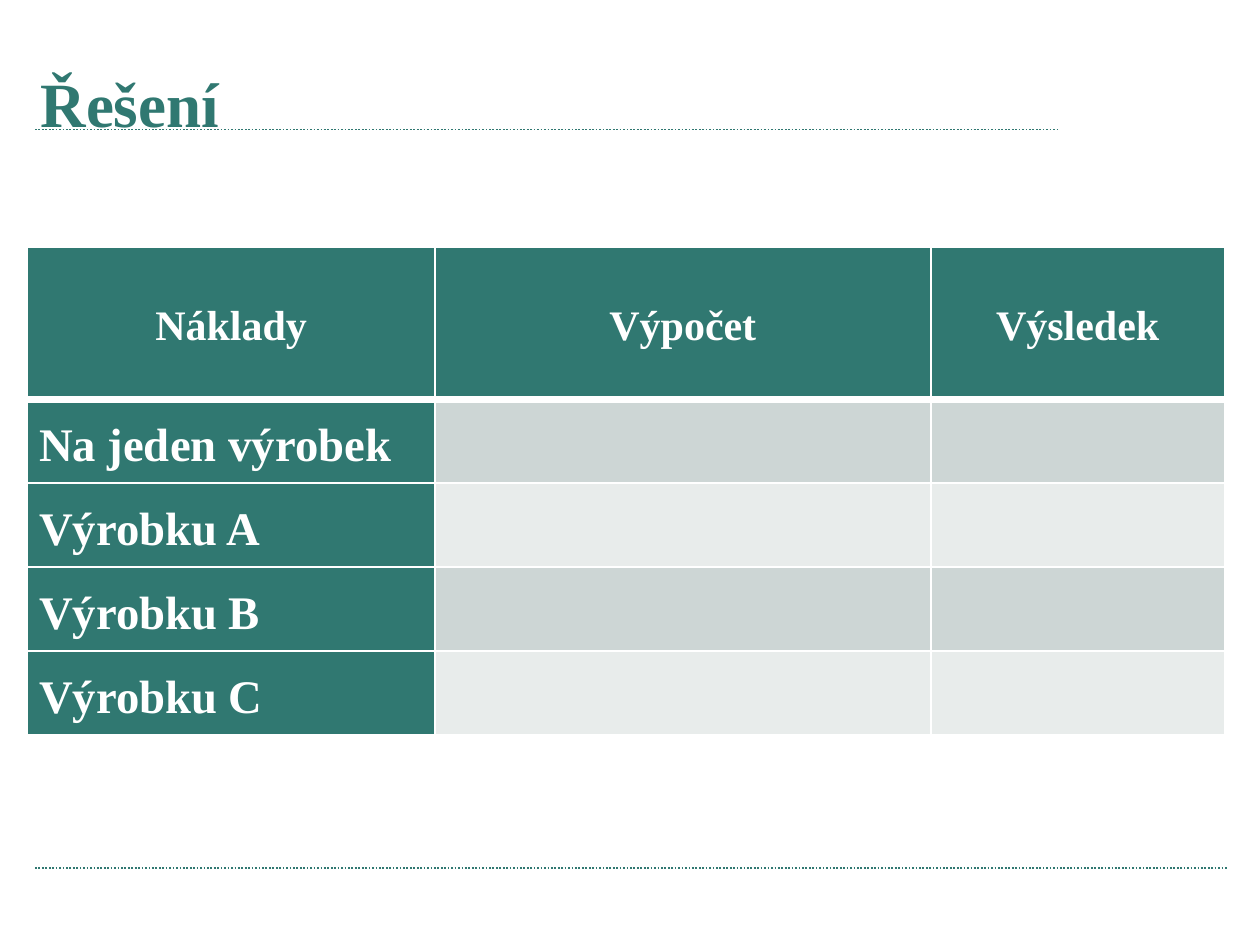
from typing import NamedTuple

from lxml.etree import SubElement
from pptx import Presentation
from pptx.dml.color import RGBColor
from pptx.enum.dml import MSO_LINE
from pptx.enum.shapes import MSO_CONNECTOR
from pptx.enum.text import MSO_ANCHOR, MSO_AUTO_SIZE, PP_ALIGN
from pptx.oxml.ns import qn
from pptx.util import Cm, Pt

COLORS = {"teal": "307871", "white": "FFFFFF", "band_dark": "CDD6D5", "band_light": "E8ECEB"}
FONT = "Times New Roman"
HEADERS = ["Náklady", "Výpočet", "Výsledek"]
COSTS = ["Na jeden výrobek", "Výrobku A", "Výrobku B", "Výrobku C"]
COL_WIDTHS = [6.17, 7.49, 4.45]
HEADER_HEIGHT, ROW_HEIGHT = 2.31, 1.27


class Rule(NamedTuple):
    left: float
    right: float
    y: float


RULES = [Rule(0.53, 15.98, 1.96), Rule(0.53, 18.57, 13.13)]


def rgb(name: str) -> RGBColor:
    return RGBColor.from_string(COLORS[name])


def set_attrs(target, values: dict) -> None:
    for name, value in values.items():
        setattr(target, name, value)


def write(tf, text: str, size: float, color: str, align=PP_ALIGN.LEFT, spacing: float = 1.0) -> None:
    p = tf.paragraphs[0]
    set_attrs(p, {"alignment": align, "line_spacing": spacing})
    r = p.add_run()
    r.text = text
    set_attrs(r.font, {"name": FONT, "size": Pt(size), "bold": True})
    r.font.color.rgb = rgb(color)


def add_rule(slide, rule: Rule) -> None:
    line = slide.shapes.add_connector(
        MSO_CONNECTOR.STRAIGHT, Cm(rule.left), Cm(rule.y), Cm(rule.right), Cm(rule.y))
    line.line.color.rgb = rgb("teal")
    set_attrs(line.line, {"width": Pt(0.75), "dash_style": MSO_LINE.ROUND_DOT})
    SubElement(line._element.spPr, qn("a:effectLst"))


def add_title(slide, text: str) -> None:
    sp = slide.shapes.title
    set_attrs(sp, {"left": Cm(0.36), "top": Cm(0.74), "width": Cm(16.79), "height": Cm(1.5)})
    tf = sp.text_frame
    set_attrs(tf, {"vertical_anchor": MSO_ANCHOR.BOTTOM, "auto_size": MSO_AUTO_SIZE.NONE})
    write(tf, text, 27, "teal")


def style_cell(cell, fill: str, widths: dict[str, float]) -> None:
    """Draw white borders of the given point widths, then fill the cell."""
    tc_pr = cell._tc.get_or_add_tcPr()
    for side, width in widths.items():
        ln = SubElement(tc_pr, qn(f"a:ln{side}"), w=str(Pt(width)))
        solid = SubElement(ln, qn("a:solidFill"))
        SubElement(solid, qn("a:srgbClr"), val=COLORS["white"])
    cell.fill.solid()
    cell.fill.fore_color.rgb = rgb(fill)
    set_attrs(cell, {"vertical_anchor": MSO_ANCHOR.MIDDLE, "margin_left": Cm(0.18),
                     "margin_right": Cm(0.18), "margin_top": 0, "margin_bottom": 0})


def add_cost_table(slide) -> None:
    heights = [HEADER_HEIGHT] + [ROW_HEIGHT] * len(COSTS)
    table = slide.shapes.add_table(
        len(heights), len(COL_WIDTHS), Cm(0.41), Cm(3.73),
        Cm(sum(COL_WIDTHS)), Cm(sum(heights))).table
    table.first_col = True
    for column, width in zip(table.columns, COL_WIDTHS):
        column.width = Cm(width)
    for row, height in zip(table.rows, heights):
        row.height = Cm(height)

    for i, row in enumerate(table.rows):
        band = "band_dark" if i % 2 else "band_light"
        widths = {"L": 1, "R": 1, "T": 3 if i == 1 else 1, "B": 3 if i == 0 else 1}
        for j, cell in enumerate(row.cells):
            style_cell(cell, "teal" if i == 0 or j == 0 else band, widths)
    for j, header in enumerate(HEADERS):
        write(table.cell(0, j).text_frame, header, 18, "white", PP_ALIGN.CENTER, 1.15)
    for i, cost in enumerate(COSTS, start=1):
        write(table.cell(i, 0).text_frame, cost, 20, "white", PP_ALIGN.JUSTIFY, 1.15)


def main() -> None:
    prs = Presentation()
    set_attrs(prs, {"slide_width": Cm(19.05), "slide_height": Cm(14.29)})
    slide = prs.slides.add_slide(prs.slide_layouts[5])
    for rule in RULES:
        add_rule(slide, rule)
    add_title(slide, "Řešení")
    add_cost_table(slide)
    prs.save("out.pptx")


if __name__ == "__main__":
    main()
